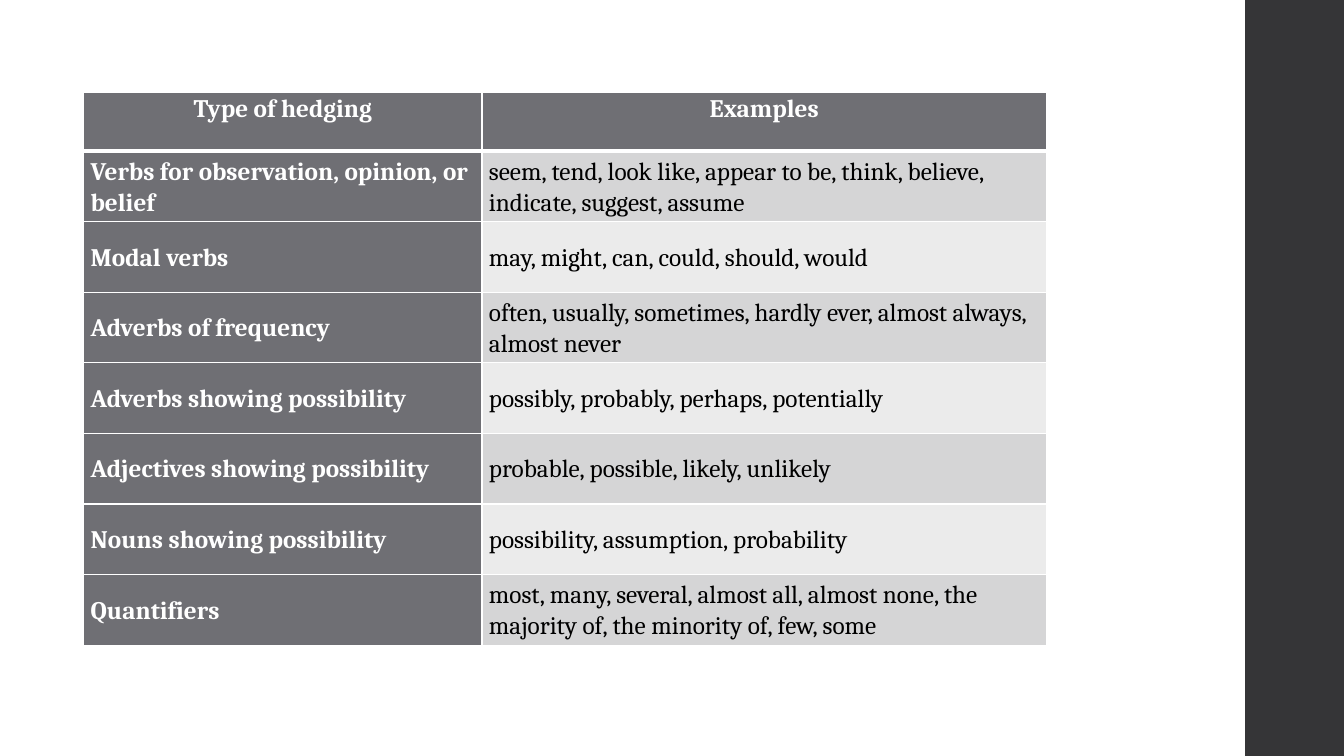
"""Build a slide with a table of hedging types and examples."""
from lxml.etree import SubElement
from pptx import Presentation
from pptx.dml.color import RGBColor
from pptx.enum.shapes import MSO_SHAPE
from pptx.enum.text import MSO_ANCHOR, PP_ALIGN
from pptx.oxml.ns import qn
from pptx.util import Inches, Pt

ROWS = [
    ("Type of hedging", "Examples"),
    ("Verbs for observation, opinion, or belief",
     "seem, tend, look like, appear to be, think, believe, indicate, suggest, assume"),
    ("Modal verbs", "may, might, can, could, should, would"),
    ("Adverbs of frequency",
     "often, usually, sometimes, hardly ever, almost always, almost never"),
    ("Adverbs showing possibility", "possibly, probably, perhaps, potentially"),
    ("Adjectives showing possibility", "probable, possible, likely, unlikely"),
    ("Nouns showing possibility", "possibility, assumption, probability"),
    ("Quantifiers",
     "most, many, several, almost all, almost none, the majority of, "
     "the minority of, few, some"),
]
WIDTHS = (3.95, 5.6)
HEAD, BODY = 0.58, 0.7
WHITE = RGBColor(0xFF, 0xFF, 0xFF)
BLACK = RGBColor(0, 0, 0)
GRAY = RGBColor(0x6F, 0x6F, 0x74)
BANDS = (RGBColor(0xEB, 0xEB, 0xEB), RGBColor(0xD5, 0xD5, 0xD6))
DARK = RGBColor(0x35, 0x35, 0x37)


def add_edges(cell, row):
    """Draw white cell borders, thicker between the head and the body."""
    props = cell._tc.get_or_add_tcPr()
    for side in "LRTB":
        thick = (row, side) in ((0, "B"), (1, "T"))
        line = SubElement(props, qn(f"a:ln{side}"), w=str(Pt(3 if thick else 1)))
        fill = SubElement(line, qn("a:solidFill"))
        SubElement(fill, qn("a:srgbClr"), val=str(WHITE))


def fill_cell(cell, text, row, col):
    """Write and format one cell."""
    strong = row == 0 or col == 0
    add_edges(cell, row)
    cell.fill.solid()
    cell.fill.fore_color.rgb = GRAY if strong else BANDS[row % 2]
    cell.margin_left = cell.margin_right = Inches(0.07)
    cell.margin_top = cell.margin_bottom = 0
    cell.vertical_anchor = MSO_ANCHOR.MIDDLE if row else MSO_ANCHOR.TOP
    para = cell.text_frame.paragraphs[0]
    para.alignment = PP_ALIGN.LEFT if row else PP_ALIGN.CENTER
    para.line_spacing = 1.07
    run = para.add_run()
    run.text = text
    run.font.name = "Cambria"
    run.font.size = Pt(18)
    run.font.bold = strong
    run.font.color.rgb = WHITE if strong else BLACK


def main():
    """Build and save the slide."""
    deck = Presentation()
    deck.slide_width, deck.slide_height = Inches(13.33), Inches(7.5)
    slide = deck.slides.add_slide(deck.slide_layouts[6])
    slide.background.fill.solid()
    slide.background.fill.fore_color.rgb = WHITE

    band = slide.shapes.add_shape(
        MSO_SHAPE.RECTANGLE, Inches(12.35), 0, Inches(0.98), Inches(7.5))
    band.shadow.inherit = False
    band.fill.solid()
    band.fill.fore_color.rgb = DARK
    band.line.fill.background()

    high = HEAD + BODY * (len(ROWS) - 1)
    table = slide.shapes.add_table(
        len(ROWS), len(WIDTHS), Inches(0.83), Inches(0.92),
        Inches(sum(WIDTHS)), Inches(high)).table
    table.first_col = True
    for col, width in enumerate(WIDTHS):
        table.columns[col].width = Inches(width)
    for row, texts in enumerate(ROWS):
        table.rows[row].height = Inches(BODY if row else HEAD)
        for col, text in enumerate(texts):
            fill_cell(table.cell(row, col), text, row, col)
    deck.save("out.pptx")


if __name__ == "__main__":
    main()
